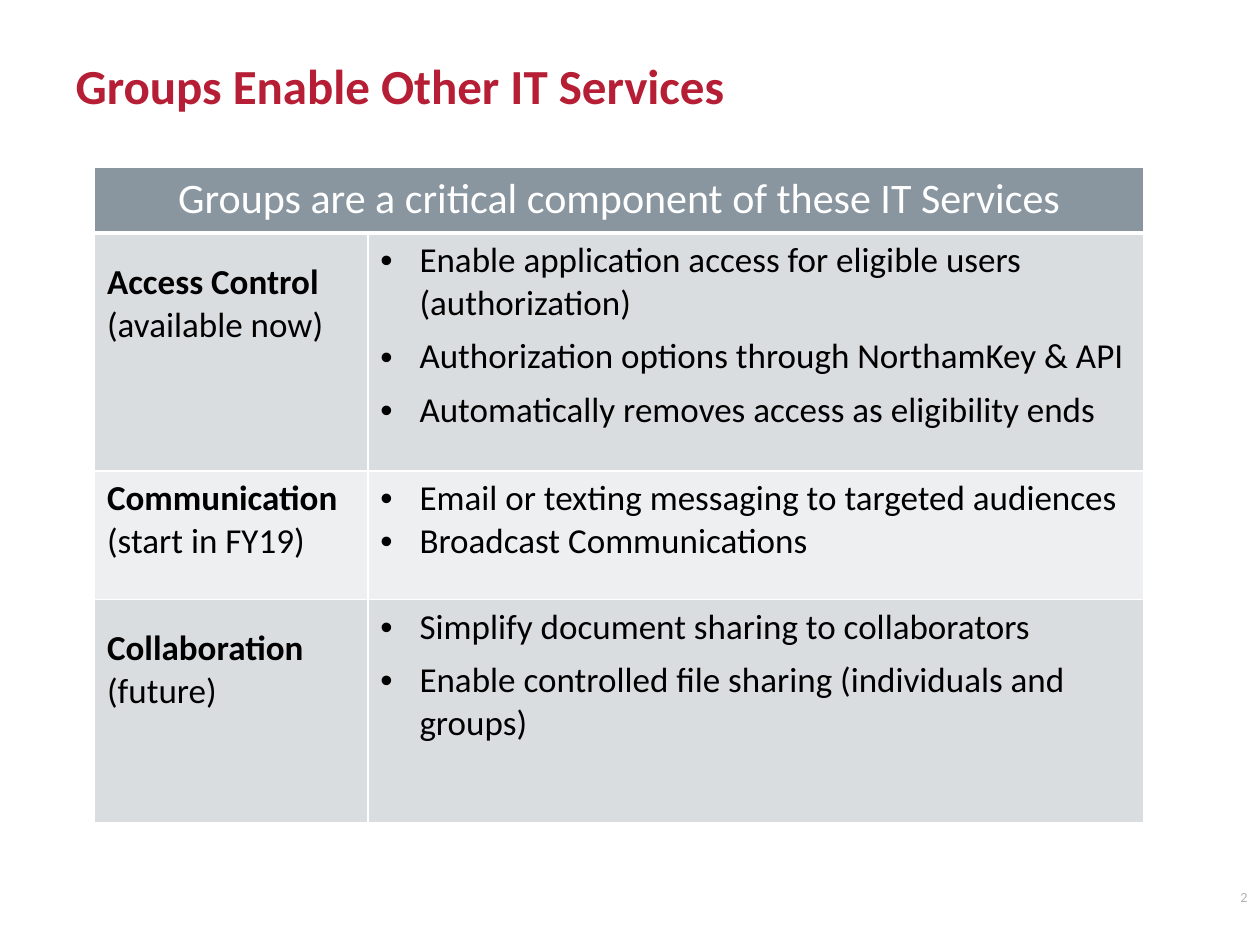
from lxml.etree import SubElement
from pptx import Presentation
from pptx.dml.color import RGBColor
from pptx.enum.text import MSO_ANCHOR, PP_ALIGN
from pptx.oxml.ns import qn
from pptx.util import Inches, Pt

FONT = "Calibri"
RED, WHITE, BLACK, GREY = "B51E34", "FFFFFF", "000000", "B2B2B2"
HEADER, BAND_DARK, BAND_LIGHT = "8996A0", "DADDDF", "EDEFF0"

COL_WIDTHS = [2.17, 6.16]
ROW_HEIGHTS = [0.52, 1.89, 1.02, 1.77]
HEADING = "Groups are a critical component of these IT Services"

# Service, status, bullets, label line spacing, space before bullets
SERVICES = [
    ("Access Control", "(available now)",
     ["Enable application access for eligible users (authorization)",
      "Authorization options through NorthamKey & API",
      "Automatically removes access as eligibility ends"], 1.5, 6),
    ("Communication", "(start in FY19)",
     ["Email or texting messaging to targeted audiences",
      "Broadcast Communications"], 1, 0),
    ("Collaboration", "(future)",
     ["Simplify document sharing to collaborators",
      "Enable controlled file sharing (individuals and groups)"], 1.5, 6),
]


def rgb(color):
    return RGBColor.from_string(color)


def add_run(p, text, size, color, bold=False):
    r = p.add_run()
    r.text = text
    r.font.name = FONT
    r.font.size = Pt(size)
    r.font.bold = bold
    r.font.color.rgb = rgb(color)


def next_paragraph(tf, index):
    return tf.add_paragraph() if index else tf.paragraphs[0]


def add_bullet(p):
    pPr = p._p.get_or_add_pPr()
    pPr.set("marL", str(Inches(0.31)))
    pPr.set("indent", str(-Inches(0.31)))
    SubElement(pPr, qn("a:buFont"), typeface="Arial")
    SubElement(pPr, qn("a:buChar"), char="•")


def style_cell(cell, fill, bottom=1, top=1):
    """Set white borders, then the fill, which must follow them in the XML."""
    tcPr = cell._tc.get_or_add_tcPr()
    for side, width in (("L", 1), ("R", 1), ("T", top), ("B", bottom)):
        ln = SubElement(tcPr, qn(f"a:ln{side}"), w=str(Pt(width)))
        SubElement(SubElement(ln, qn("a:solidFill")), qn("a:srgbClr"), val=WHITE)
    cell.fill.solid()
    cell.fill.fore_color.rgb = rgb(fill)


def add_title(s, text):
    title = s.shapes.title
    title.left, title.top = Inches(0.5), Inches(0.17)
    title.width, title.height = Inches(9), Inches(1)
    tf = title.text_frame
    tf.vertical_anchor = MSO_ANCHOR.MIDDLE
    p = tf.paragraphs[0]
    p.alignment = PP_ALIGN.LEFT
    add_run(p, text, 28, RED, bold=True)


def add_page_number(s, number):
    sp = s.shapes.add_textbox(Inches(7), Inches(6.92), Inches(3), Inches(0.4))
    tf = sp.text_frame
    tf.word_wrap = True
    tf.vertical_anchor = MSO_ANCHOR.MIDDLE
    p = tf.paragraphs[0]
    p.alignment = PP_ALIGN.RIGHT
    add_run(p, number, 8, GREY)


def fill_label(cell, name, status, spacing):
    tf = cell.text_frame
    p = tf.paragraphs[0]
    p.line_spacing = spacing
    add_run(p, name, 20, BLACK, bold=True)
    add_run(tf.add_paragraph(), status, 20, BLACK)


def fill_bullets(cell, items, space_before):
    for i, item in enumerate(items):
        p = next_paragraph(cell.text_frame, i)
        p.space_before = Pt(space_before)
        add_bullet(p)
        add_run(p, item, 20, BLACK)


def add_services_table(s):
    table = s.shapes.add_table(
        len(ROW_HEIGHTS), len(COL_WIDTHS), Inches(0.75), Inches(1.33),
        Inches(sum(COL_WIDTHS)), Inches(sum(ROW_HEIGHTS))).table
    for col, width in zip(table.columns, COL_WIDTHS):
        col.width = Inches(width)
    for row, height in zip(table.rows, ROW_HEIGHTS):
        row.height = Inches(height)

    # Heading across both columns
    heading = table.cell(0, 0)
    heading.merge(table.cell(0, 1))
    for cell in table.rows[0].cells:
        style_cell(cell, HEADER, bottom=3)
    p = heading.text_frame.paragraphs[0]
    p.alignment = PP_ALIGN.CENTER
    add_run(p, HEADING, 24, WHITE)

    # One banded row per service
    for i, (name, status, items, spacing, before) in enumerate(SERVICES, 1):
        label, bullets = table.cell(i, 0), table.cell(i, 1)
        for cell in (label, bullets):
            style_cell(cell, BAND_DARK if i % 2 else BAND_LIGHT,
                       top=3 if i == 1 else 1)
        fill_label(label, name, status, spacing)
        fill_bullets(bullets, items, before)


def main():
    prs = Presentation()
    prs.slide_width, prs.slide_height = Inches(10), Inches(7.5)
    s = prs.slides.add_slide(prs.slide_layouts[5])
    add_title(s, "Groups Enable Other IT Services")
    add_services_table(s)
    add_page_number(s, "2")
    prs.save("out.pptx")


if __name__ == "__main__":
    main()
